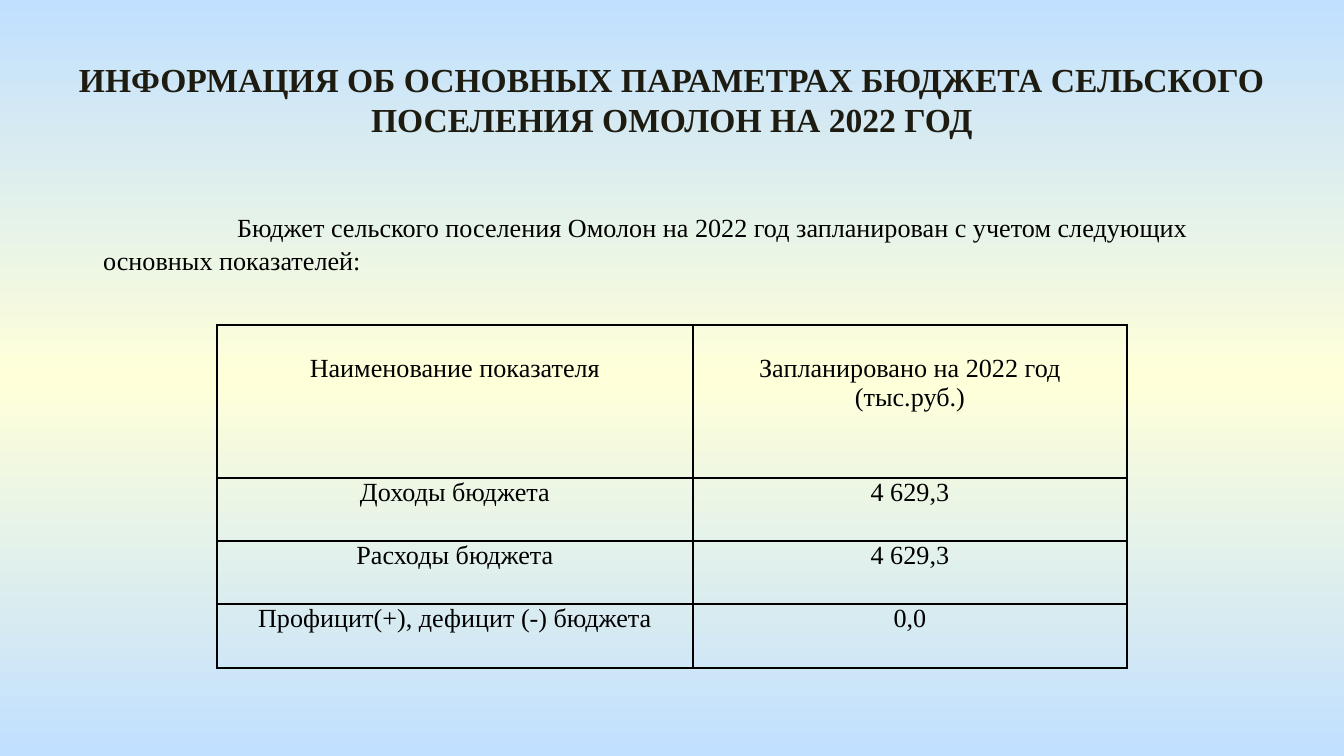
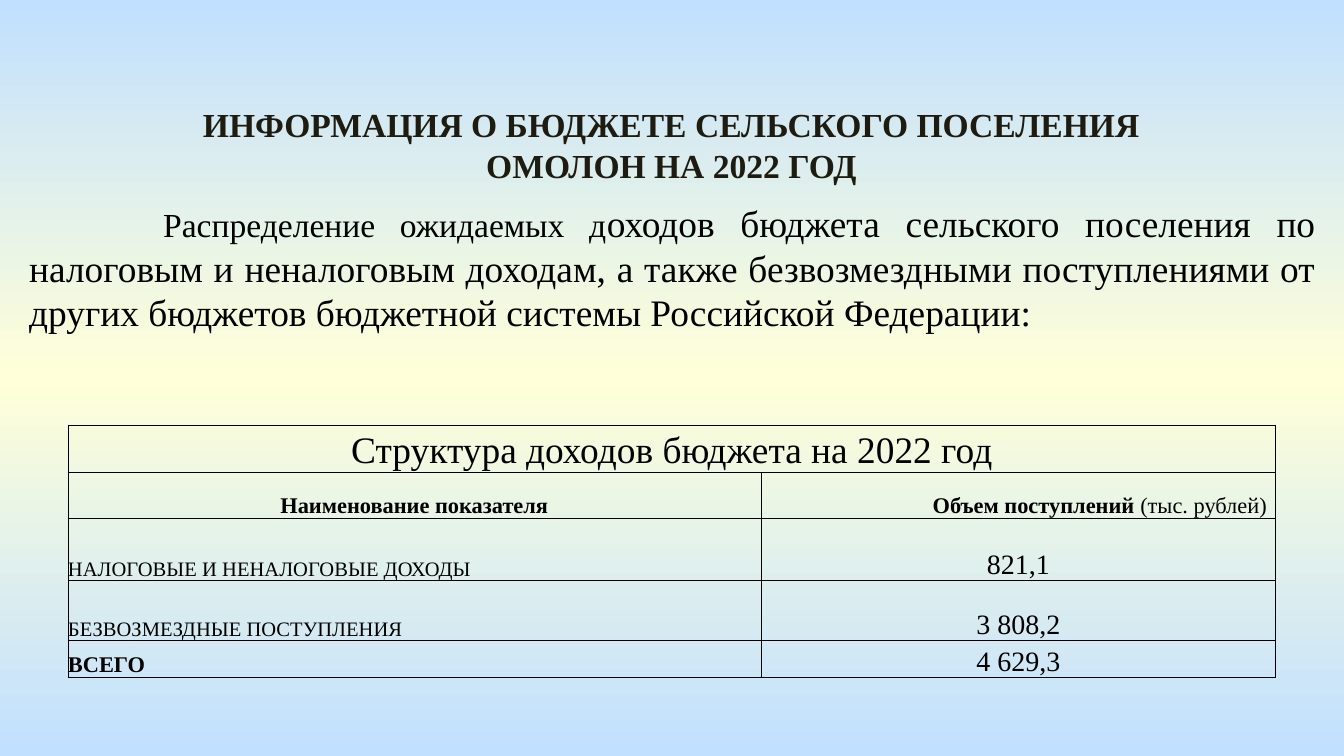
from copy import deepcopy

from lxml import etree
from pptx import Presentation
from pptx.dml.color import RGBColor
from pptx.enum.shapes import MSO_SHAPE
from pptx.enum.text import MSO_ANCHOR, PP_ALIGN
from pptx.oxml.ns import qn
from pptx.util import Pt

PX = 914400 / 134.4
FONT = "Times New Roman"
COLORS = {"sky": "C1E0FF", "cream": "FFFFD9", "title": "1E1C11", "text": "000000"}
LEFT, CENTER, RIGHT, JUSTIFY = PP_ALIGN.LEFT, PP_ALIGN.CENTER, PP_ALIGN.RIGHT, PP_ALIGN.JUSTIFY
TOP, BOTTOM = MSO_ANCHOR.TOP, MSO_ANCHOR.BOTTOM
RECTANGLE = MSO_SHAPE.RECTANGLE


def px(*lengths):
    return [round(length * PX) for length in lengths]


def write(frame, spans, align, color="text"):
    """Fill the first paragraph with (text, size, bold) spans and return it."""
    para = frame.paragraphs[0]
    para.alignment = align
    for text, size, bold in spans:
        span = para.add_run()
        span.text = text
        span.font.name = FONT
        span.font.size = Pt(size)
        span.font.bold = bold
        span.font.color.rgb = RGBColor.from_string(COLORS[color])
    return para


slides = [
    {
        "title": "ИНФОРМАЦИЯ ОБ ОСНОВНЫХ ПАРАМЕТРАХ БЮДЖЕТА СЕЛЬСКОГО ПОСЕЛЕНИЯ ОМОЛОН НА 2022 ГОД",
        "title_at": (47, 52, 1250, 95),
        "intro": [("Бюджет сельского поселения Омолон на 2022 год запланирован "
                   "с учетом следующих основных показателей:", 14, False)],
        "intro_at": (90, 196, 1175, 86),
        "intro_align": LEFT,
        "intro_leading": 17.5,
        "table_at": (217, 325),
        "columns": (476, 434),
        "rows": (153, 63, 63, 64),
        "border": 1,
        "anchor": TOP,
        "cells": [
            [([(text, 14, False)], CENTER, 9, 29 if row == 0 else 0) for text in texts]
            for row, texts in enumerate([
                ("Наименование показателя", "Запланировано на 2022 год (тыс.руб.)"),
                ("Доходы бюджета", "4 629,3"),
                ("Расходы бюджета", "4 629,3"),
                ("Профицит(+), дефицит (-) бюджета", "0,0"),
            ])
        ],
    },
    {
        "title": "ИНФОРМАЦИЯ О БЮДЖЕТЕ СЕЛЬСКОГО ПОСЕЛЕНИЯ ОМОЛОН НА 2022 ГОД",
        "title_at": (152, 98, 1039, 95),
        "intro": [("Распределение ожидаемых д", 18, False),
                  ("оходов бюджета сельского поселения по налоговым и неналоговым доходам, "
                   "а также безвозмездными поступлениями от других бюджетов бюджетной "
                   "системы Российской Федерации:", 20, False)],
        "intro_at": (16, 192, 1313, 149),
        "intro_align": JUSTIFY,
        "intro_leading": 24,
        "table_at": (68, 425),
        "columns": (693, 515),
        "rows": (47, 46, 63, 60, 37),
        "border": 0.5,
        "anchor": BOTTOM,
        "cells": [
            [([("Структура доходов бюджета на 2022 год", 20, False)], CENTER, 0, 0),
             ([], CENTER, 0, 0)],
            [([("Наименование показателя", 12, True)], CENTER, 0, 0),
             ([("Объем поступлений ", 12, True), ("(тыс. рублей)", 12, False)], RIGHT, 9, 0)],
        ] + [
            [([(name, size, bold)], LEFT, 0, 0), ([(amount, 15, False)], CENTER, 0, 0)]
            for name, size, bold, amount in [
                ("НАЛОГОВЫЕ И НЕНАЛОГОВЫЕ ДОХОДЫ", 11, False, "821,1"),
                ("БЕЗВОЗМЕЗДНЫЕ ПОСТУПЛЕНИЯ", 11, False, "3 808,2"),
                ("ВСЕГО", 12, True, "4 629,3"),
            ]
        ],
    },
]

deck = Presentation()
deck.slide_width, deck.slide_height = px(1344, 756)

# Shared background: sky, cream, sky from top to bottom
master = deck.slide_master
backdrop = master.background.fill
backdrop.gradient()
backdrop.gradient_angle = 270
stop_list = master.element.find(".//" + qn("a:gsLst"))
stop_list.insert(1, deepcopy(stop_list[0]))
for stop, position, name in zip(backdrop.gradient_stops, (0, 0.5, 1), ("sky", "cream", "sky")):
    stop.position = position
    stop.color.rgb = RGBColor.from_string(COLORS[name])

for content in slides:
    page = deck.slides.add_slide(deck.slide_layouts[6])

    # The intro box shows the slide background as its fill
    intro = page.shapes.add_shape(RECTANGLE, *px(*content["intro_at"]))
    intro.shadow.inherit = False
    intro.element.set("useBgFill", "1")
    intro.line.fill.background()
    intro.text_frame.word_wrap = True
    intro.text_frame.vertical_anchor = BOTTOM
    para = write(intro.text_frame, content["intro"], content["intro_align"])
    para.line_spacing = Pt(content["intro_leading"])
    para._p.get_or_add_pPr().set("indent", str(px(134)[0]))

    title = page.shapes.add_textbox(*px(*content["title_at"]))
    title.text_frame.word_wrap = True
    para = write(title.text_frame, [(content["title"], 18, True)], CENTER, "title")
    para.line_spacing = Pt(21.5)

    columns, rows = content["columns"], content["rows"]
    table = page.shapes.add_table(
        len(rows), len(columns), *px(*content["table_at"], sum(columns), sum(rows))).table
    table.first_row = table.horz_banding = False
    for column, width in zip(table.columns, px(*columns)):
        column.width = width
    for row, height in zip(table.rows, px(*rows)):
        row.height = height

    for row, row_cells in enumerate(content["cells"]):
        for column, (spans, align, side, top) in enumerate(row_cells):
            cell = table.cell(row, column)
            cell.margin_left, cell.margin_right, cell.margin_top, cell.margin_bottom = px(
                side, side, top, 0)
            cell.vertical_anchor = content["anchor"]
            cell.fill.background()
            write(cell.text_frame, spans, align)
            properties = cell._tc.get_or_add_tcPr()
            for order, edge in enumerate(("a:lnL", "a:lnR", "a:lnT", "a:lnB")):
                line = etree.Element(qn(edge), w=str(Pt(content["border"])))
                solid = etree.SubElement(line, qn("a:solidFill"))
                etree.SubElement(solid, qn("a:srgbClr"), val=COLORS["text"])
                properties.insert(order, line)
    if not content["cells"][0][1][0]:
        table.cell(0, 0).merge(table.cell(0, 1))

deck.save("out.pptx")
